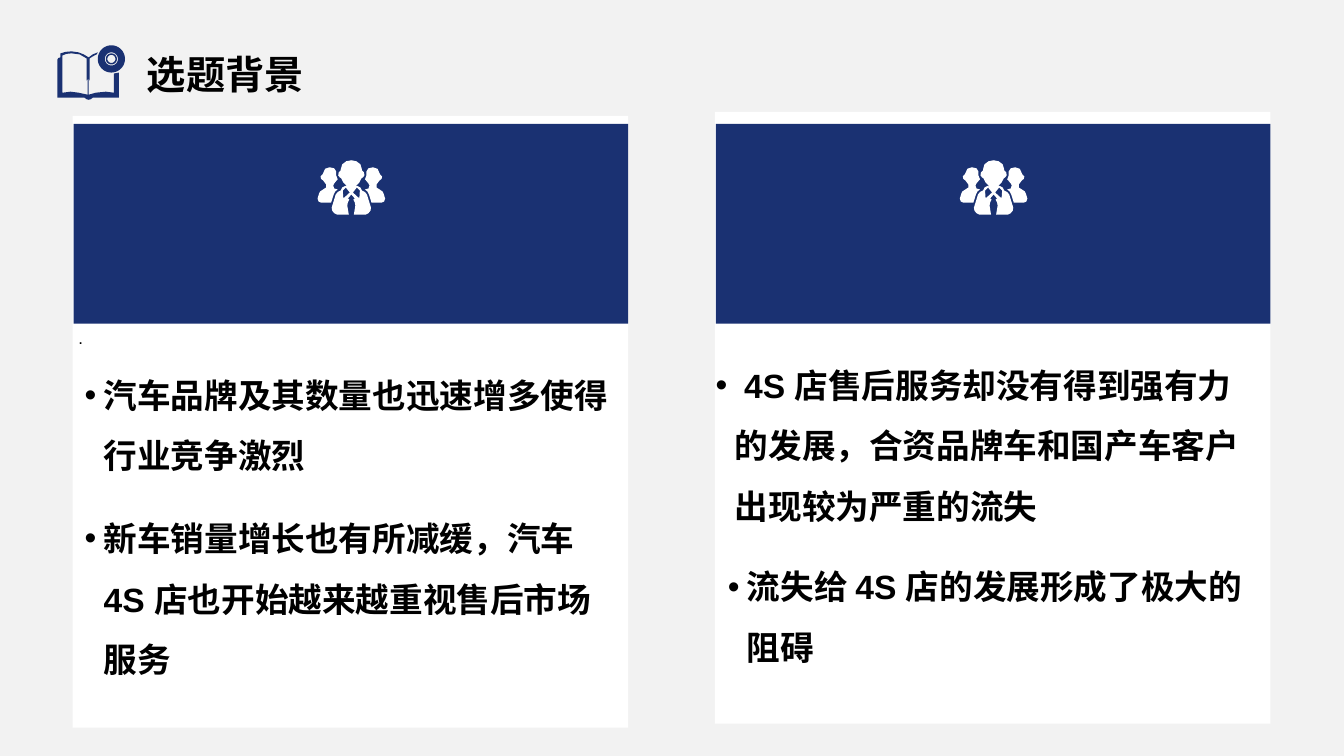
import math
from pptx import Presentation, util as u
from pptx.dml.color import RGBColor
from pptx.enum import shapes, text
from pptx.oxml.ns import qn
from lxml import etree

COLORS = {"background": "F2F2F2", "navy": "1A3172", "white": "FFFFFF", "black": "000000"}
CARD_LEFTS = (0.72, 7.09)
CARD_TOPS = (1.15, 1.11)
CARD_WIDTH, CARD_HEIGHT = 5.51, 6.07
BANNER_TOP, BANNER_HEIGHT = 1.23, 1.98
TEXT_WIDTH, TEXT_HEIGHT = 5.49, 1.06
HANGING = u.Inches(0.19)

presentation = Presentation()
presentation.slide_width = u.Inches(13.33)
presentation.slide_height = u.Inches(7.5)
slide = presentation.slides.add_slide(presentation.slide_layouts[6])
slide.background.fill.solid()
slide.background.fill.fore_color.rgb = RGBColor.from_string(COLORS["background"])


def add_text(content, left, top, width=TEXT_WIDTH, height=TEXT_HEIGHT, size=24,
             bold=True, bullet=False, spacing=1.5, anchor=text.MSO_ANCHOR.TOP):
    box = slide.shapes.add_textbox(*map(u.Inches, (left, top, width, height)))
    frame = box.text_frame
    frame.word_wrap = True
    frame.vertical_anchor = anchor
    paragraph = frame.paragraphs[0]
    paragraph.line_spacing = spacing
    run = paragraph.add_run()
    run.text = content
    run.font.name = "Arial"
    run.font.size = u.Pt(size)
    run.font.bold = bold
    run.font.color.rgb = RGBColor.from_string(COLORS["black"])
    if bullet:
        properties = paragraph._p.get_or_add_pPr()
        properties.set("marL", str(HANGING))
        properties.set("indent", str(-HANGING))
        etree.SubElement(properties, qn("a:buFont"), typeface="Arial")
        etree.SubElement(properties, qn("a:buChar"), char="•")


def add_icon(contours, left, top, color):
    """Draw closed contours, given in hundredths of an inch, as one shape."""
    builder = None
    for contour in contours:
        points = [(u.Inches(left + x / 100), u.Inches(top + y / 100)) for x, y in contour]
        if builder is None:
            builder = slide.shapes.build_freeform(*points[0])
        else:
            builder.move_to(*points[0])
        builder.add_line_segments(points[1:], close=True)
    icon = builder.convert_to_shape()
    icon.shadow.inherit = False
    icon.fill.solid()
    icon.fill.fore_color.rgb = RGBColor.from_string(COLORS[color])
    icon.line.fill.background()


# Book with a disc, beside the title
book_outline = [
    (14, 6), (21, 7), (26, 9), (31, 12), (35, 9), (40, 7), (39, 9), (35, 11), (32, 13),
    (32, 35), (31, 33), (31, 49), (38, 47), (48, 46), (56, 47), (56, 28), (61, 27),
    (61, 52), (35, 52), (33, 53.5), (31, 54), (29, 53.5), (27, 52), (0, 52), (0, 14),
    (1, 12.5), (3, 12), (3, 8), (8, 6.5)]
left_page = [
    (14, 8), (9, 8.5), (5, 10), (5, 47), (13, 46), (21, 47), (30, 49), (30, 33),
    (29, 35), (29, 13), (22, 9)]
disc_rings = [
    [(53.5 + radius * math.cos(math.tau * step / 48),
      13.5 + radius * math.sin(math.tau * step / 48)) for step in range(48)]
    for radius in (13.5, 6.5, 5.5, 4)]
add_icon([book_outline, left_page, *disc_rings], 0.57, 0.45, "navy")
add_text("选题背景", 1.36, 0.29, 2.06, 0.73, size=28, spacing=0.9,
         anchor=text.MSO_ANCHOR.BOTTOM)

# Team icon: right-hand halves, mirrored about x = 0
leader_half = [
    (0, 0), (5, 1), (9, 4), (10.5, 9), (10.5, 10), (12.5, 12), (13, 15), (11.5, 17),
    (10, 18), (8, 22), (5.5, 24.5), (4.5, 26), (6, 25.5), (9, 27), (10.5, 30),
    (13.5, 31.5), (15.5, 34), (19.5, 47), (19, 50), (17, 52.5), (14, 54), (2.5, 54),
    (4, 45), (3.5, 42), (2, 39), (3.5, 38), (0, 34)]
collar = [(5.5, 27), (1.5, 32), (7, 37), (8, 37), (8.5, 30)]
colleague = [
    (21.5, 7), (26, 8.5), (28.5, 14), (30.5, 16), (30, 18.5), (28, 20), (25, 24),
    (25, 27), (28, 29), (31, 31), (32, 33), (33.5, 38), (32.5, 41), (30, 42), (20, 42),
    (17.5, 34), (16, 31), (13.5, 29), (17, 28), (18, 25), (17, 23), (14.5, 20),
    (13.5, 19), (15, 15), (15, 11), (17, 8)]
leader = leader_half + [(-x, y) for x, y in reversed(leader_half[1:-1])]
pairs = [[(side * x, y) for x, y in half] for half in (collar, colleague) for side in (1, -1)]

# Cards with a navy banner and a centred icon
for left, top in zip(CARD_LEFTS, CARD_TOPS):
    for x, y, width, height, color in (
            (left, top, CARD_WIDTH, CARD_HEIGHT, "white"),
            (left + 0.01, BANNER_TOP, CARD_WIDTH - 0.01, BANNER_HEIGHT, "navy")):
        panel = slide.shapes.add_shape(shapes.MSO_SHAPE.RECTANGLE,
                                       *map(u.Inches, (x, y, width, height)))
        panel.shadow.inherit = False
        panel.fill.solid()
        panel.fill.fore_color.rgb = RGBColor.from_string(COLORS[color])
        panel.line.fill.background()
    add_icon([leader, *pairs], left + 0.01 + CARD_WIDTH / 2, 1.59, "white")

# Card text
add_text(".", 0.68, 3.1, height=0.64, size=12, bold=False)
for content, left, top in (
        ("汽车品牌及其数量也迅速增多使得行业竞争激烈", 0.74, 3.47),
        ("新车销量增长也有所减缓，汽车 4S 店也开始越来越重视售后市场服务", 0.74, 4.89),
        (" 4S 店售后服务却没有得到强有力的发展，合资品牌车和国产车客户出现较为严重的流失", 7, 3.37),
        ("流失给 4S 店的发展形成了极大的阻碍", 7.12, 5.37)):
    add_text(content, left, top, bullet=True)

presentation.save("out.pptx")
